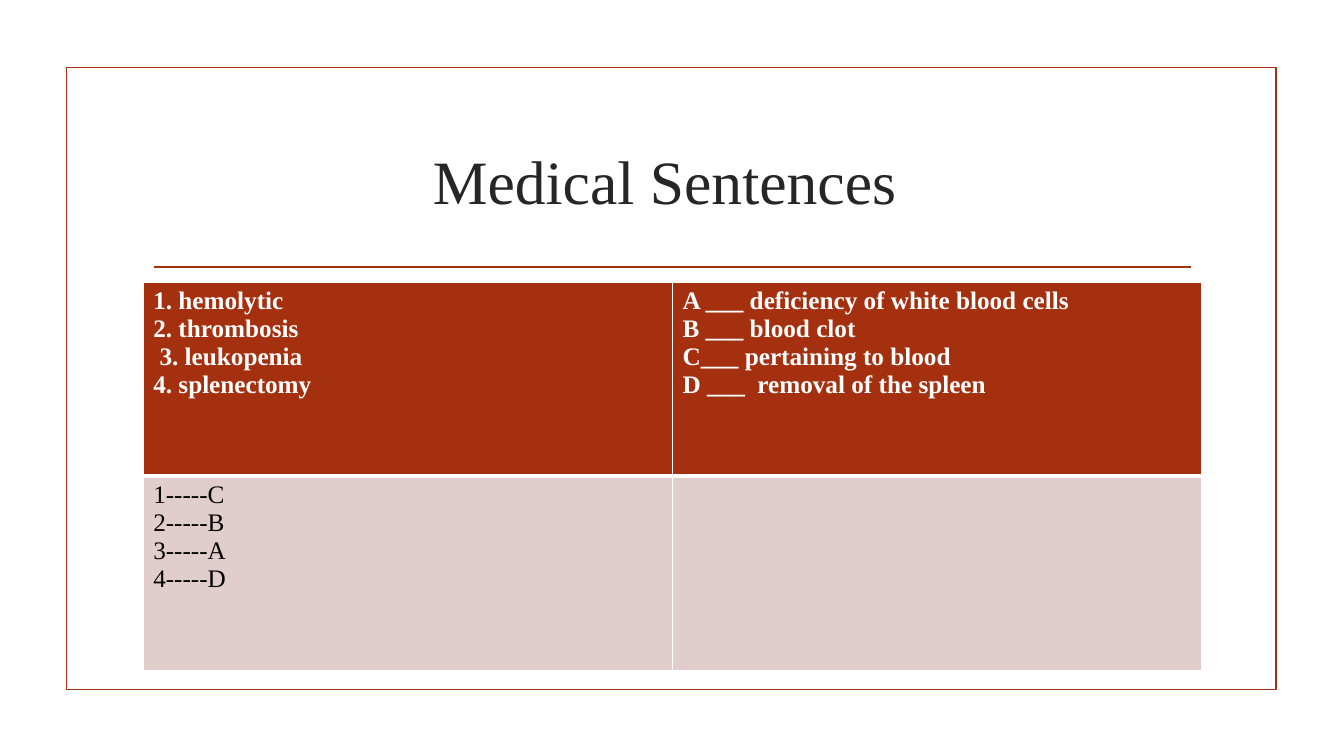
from lxml import etree
from pptx import Presentation
from pptx import util as u
from pptx.dml.color import RGBColor
from pptx.enum import shapes, text
from pptx.oxml.ns import qn

PX = 9144  # EMU per px, 100 px to the inch
FONT = "Times New Roman"
COLORS = {"rust": "A5300F", "pink": "E1CDCC", "title": "262626",
          "white": "FFFFFF", "black": "000000"}


def add_run(p, wording, size, color, bold=False):
    r = p.add_run()
    r.text = wording
    r.font.name, r.font.size, r.font.bold = FONT, u.Pt(size), bold
    r.font.color.rgb = RGBColor.from_string(COLORS[color])


def set_borders(cell, widths):
    """Draw white cell borders; widths are points for left, right, top, bottom."""
    tcPr = cell._tc.get_or_add_tcPr()
    for i, (side, width) in enumerate(zip("LRTB", widths)):
        ln = etree.Element(qn(f"a:ln{side}"), w=str(u.Pt(width)))
        fill = etree.SubElement(ln, qn("a:solidFill"))
        etree.SubElement(fill, qn("a:srgbClr"), val=COLORS["white"])
        tcPr.insert(i, ln)


prs = Presentation()
prs.slide_width, prs.slide_height = 1333 * PX, 750 * PX
s = prs.slides.add_slide(prs.slide_layouts[5])

# Frame and rule
frame = s.shapes.add_shape(shapes.MSO_SHAPE.RECTANGLE, 66 * PX, 67 * PX, 1200 * PX, 617 * PX)
frame.shadow.inherit = False
frame.fill.background()
rule = s.shapes.add_connector(shapes.MSO_CONNECTOR.STRAIGHT, 153 * PX, 265 * PX, 1181 * PX, 265 * PX)
etree.SubElement(rule._element.spPr, qn("a:effectLst"))
for sp in (frame, rule):
    sp.line.color.rgb = RGBColor.from_string(COLORS["rust"])
    sp.line.width = u.Pt(1.25)

# Title
title = s.shapes.title
title.left, title.top, title.width, title.height = 142 * PX, 107 * PX, 1050 * PX, 143 * PX
tf = title.text_frame
tf.word_wrap = True
tf.auto_size = text.MSO_AUTO_SIZE.NONE
tf.vertical_anchor = text.MSO_ANCHOR.MIDDLE
p = tf.paragraphs[0]
p.alignment = text.PP_ALIGN.CENTER
add_run(p, "Medical Sentences ", 44, "title")

# Matching table: terms and meanings above, answers below
rows = [
    ("rust", "white", True, (1, 1, 1, 3), [
        ["1. hemolytic", "2. thrombosis", " 3. leukopenia", "4. splenectomy"],
        ["A ___ deficiency of white blood cells", "B ___ blood clot",
         "C___ pertaining to blood", "D ___  removal of the spleen"]]),
    ("pink", "black", False, (1, 1, 3, 1), [
        ["1-----C", "2-----B", "3-----A", "4-----D"], []]),
]
table = s.shapes.add_table(2, 2, 142 * PX, 280 * PX, 1050 * PX, 385 * PX).table
table.horz_banding = False
for i, (fill, color, bold, widths, columns) in enumerate(rows):
    for j, lines in enumerate(columns):
        cell = table.cell(i, j)
        cell.fill.solid()
        cell.fill.fore_color.rgb = RGBColor.from_string(COLORS[fill])
        set_borders(cell, widths)
        tf = cell.text_frame
        for k, line in enumerate(lines):
            p = tf.add_paragraph() if k else tf.paragraphs[0]
            add_run(p, line, 18, color, bold)

prs.save("out.pptx")
